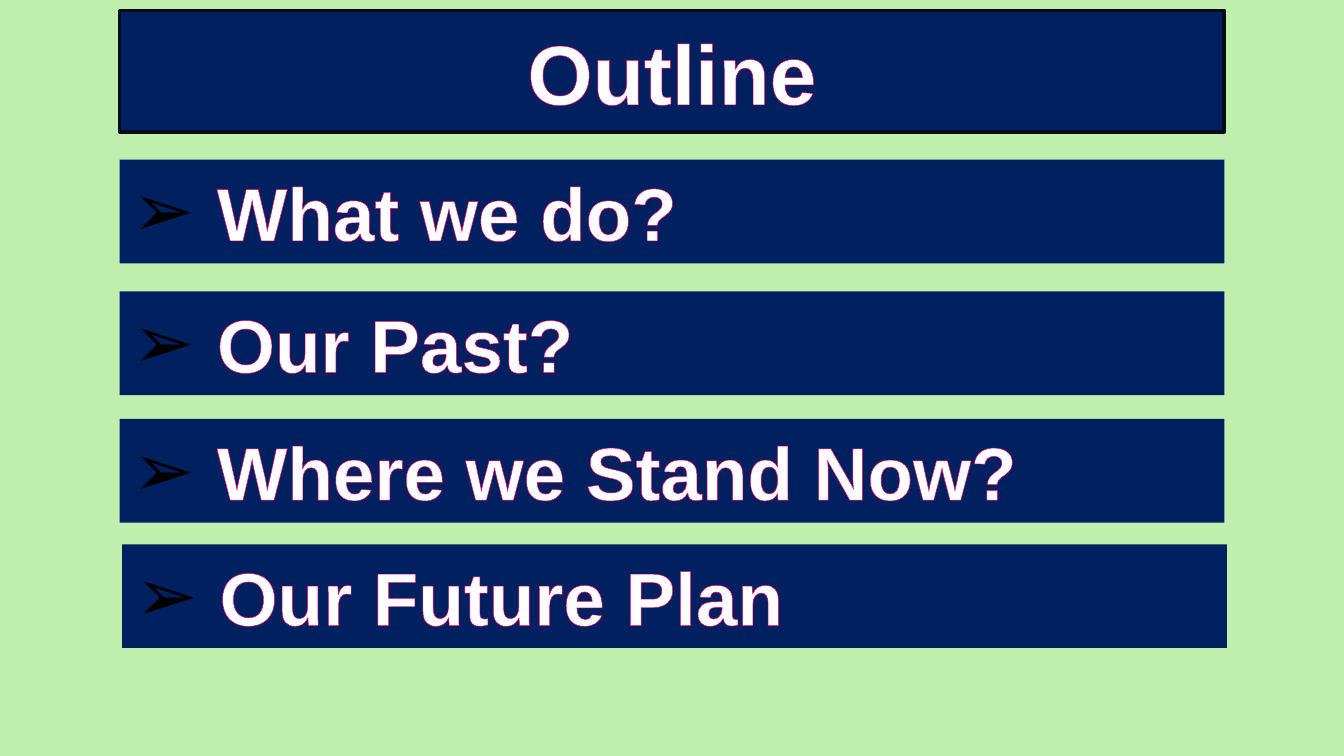
from dataclasses import dataclass

from lxml import etree
from pptx import Presentation
from pptx.dml.color import RGBColor
from pptx.enum.shapes import MSO_SHAPE
from pptx.enum.text import MSO_ANCHOR, MSO_AUTO_SIZE, PP_ALIGN
from pptx.oxml.ns import qn
from pptx.shapes.base import BaseShape
from pptx.slide import Slide
from pptx.text.text import _Paragraph
from pptx.util import Cm, Pt

RECTANGLE = MSO_SHAPE.RECTANGLE
TOP, MIDDLE = MSO_ANCHOR.TOP, MSO_ANCHOR.MIDDLE
LEFT, CENTER = PP_ALIGN.LEFT, PP_ALIGN.CENTER
NO_FIT, GROW = MSO_AUTO_SIZE.NONE, MSO_AUTO_SIZE.SHAPE_TO_FIT_TEXT
TITLE_ONLY = 5


@dataclass(frozen=True)
class Theme:
    font: str = "Arial"
    title_size: int = 45
    topic_size: int = 40
    background: str = "BFEEAD"
    banner: str = "002060"
    title_border: str = "000C18"
    text: str = "FFFFFF"
    text_outline: str = "FF0066"
    bullet: str = "000000"


@dataclass(frozen=True)
class Topic:
    text: str
    top: float
    left: float = 2.26


THEME = Theme()
BANNER_LEFT, BANNER_WIDTH, TOPIC_HEIGHT = 2.26, 20.88, 1.96
BULLET_INDENT = Cm(1.59)
TOPICS = (
    Topic("What we do?", 3.02),
    Topic("Our Past?", 5.51),
    Topic("Where we Stand Now?", 7.92),
    Topic("Our Future Plan", 10.29, left=2.31),
)


def fill_solid(shape: BaseShape, color: str) -> None:
    shape.fill.solid()
    shape.fill.fore_color.rgb = RGBColor.from_string(color)


def format_text(paragraph: _Paragraph, size: int, alignment: PP_ALIGN) -> None:
    """Set bold white lettering with a thin coloured outline."""
    paragraph.alignment = alignment
    for run in paragraph.runs:
        font = run.font
        font.name, font.size, font.bold = THEME.font, Pt(size), True
        font.color.rgb = RGBColor.from_string(THEME.text)
        outline = etree.Element(qn("a:ln"), w=str(Pt(0.75)))
        solid = etree.SubElement(outline, qn("a:solidFill"))
        etree.SubElement(solid, qn("a:srgbClr"), val=THEME.text_outline)
        run._r.get_or_add_rPr().insert(0, outline)


def add_arrow_bullet(paragraph: _Paragraph) -> None:
    properties = paragraph._p.get_or_add_pPr()
    properties.set("marL", str(BULLET_INDENT))
    properties.set("indent", str(-BULLET_INDENT))
    color = etree.SubElement(properties, qn("a:buClr"))
    etree.SubElement(color, qn("a:srgbClr"), val=THEME.bullet)
    etree.SubElement(properties, qn("a:buFont"), typeface=THEME.font)
    etree.SubElement(properties, qn("a:buChar"), char="➢")


def format_title(slide: Slide, text: str) -> None:
    """Turn the title placeholder into a bordered terminator-shaped banner."""
    title = slide.shapes.title
    title.left, title.top = Cm(BANNER_LEFT), Cm(0.2)
    title.width, title.height = Cm(BANNER_WIDTH), Cm(2.29)
    geometry = etree.SubElement(
        title._element.spPr, qn("a:prstGeom"), prst="flowChartTerminator"
    )
    etree.SubElement(geometry, qn("a:avLst"))
    fill_solid(title, THEME.banner)
    title.line.color.rgb = RGBColor.from_string(THEME.title_border)
    title.line.width = Pt(2)
    frame = title.text_frame
    frame.text = text
    frame.auto_size, frame.vertical_anchor = NO_FIT, MIDDLE
    format_text(frame.paragraphs[0], THEME.title_size, CENTER)


def add_topic(slide: Slide, topic: Topic) -> None:
    banner = slide.shapes.add_shape(
        RECTANGLE, Cm(topic.left), Cm(topic.top), Cm(BANNER_WIDTH), Cm(TOPIC_HEIGHT)
    )
    banner.shadow.inherit = False
    fill_solid(banner, THEME.banner)
    banner.line.fill.background()
    frame = banner.text_frame
    frame.text = topic.text
    frame.word_wrap = True
    frame.auto_size, frame.vertical_anchor = GROW, TOP
    paragraph = frame.paragraphs[0]
    format_text(paragraph, THEME.topic_size, LEFT)
    add_arrow_bullet(paragraph)


def main() -> None:
    presentation = Presentation()
    presentation.slide_width, presentation.slide_height = Cm(25.4), Cm(14.29)
    slide = presentation.slides.add_slide(presentation.slide_layouts[TITLE_ONLY])
    fill_solid(slide.background, THEME.background)
    format_title(slide, "Outline")
    for topic in TOPICS:
        add_topic(slide, topic)
    presentation.save("out.pptx")


if __name__ == "__main__":
    main()
